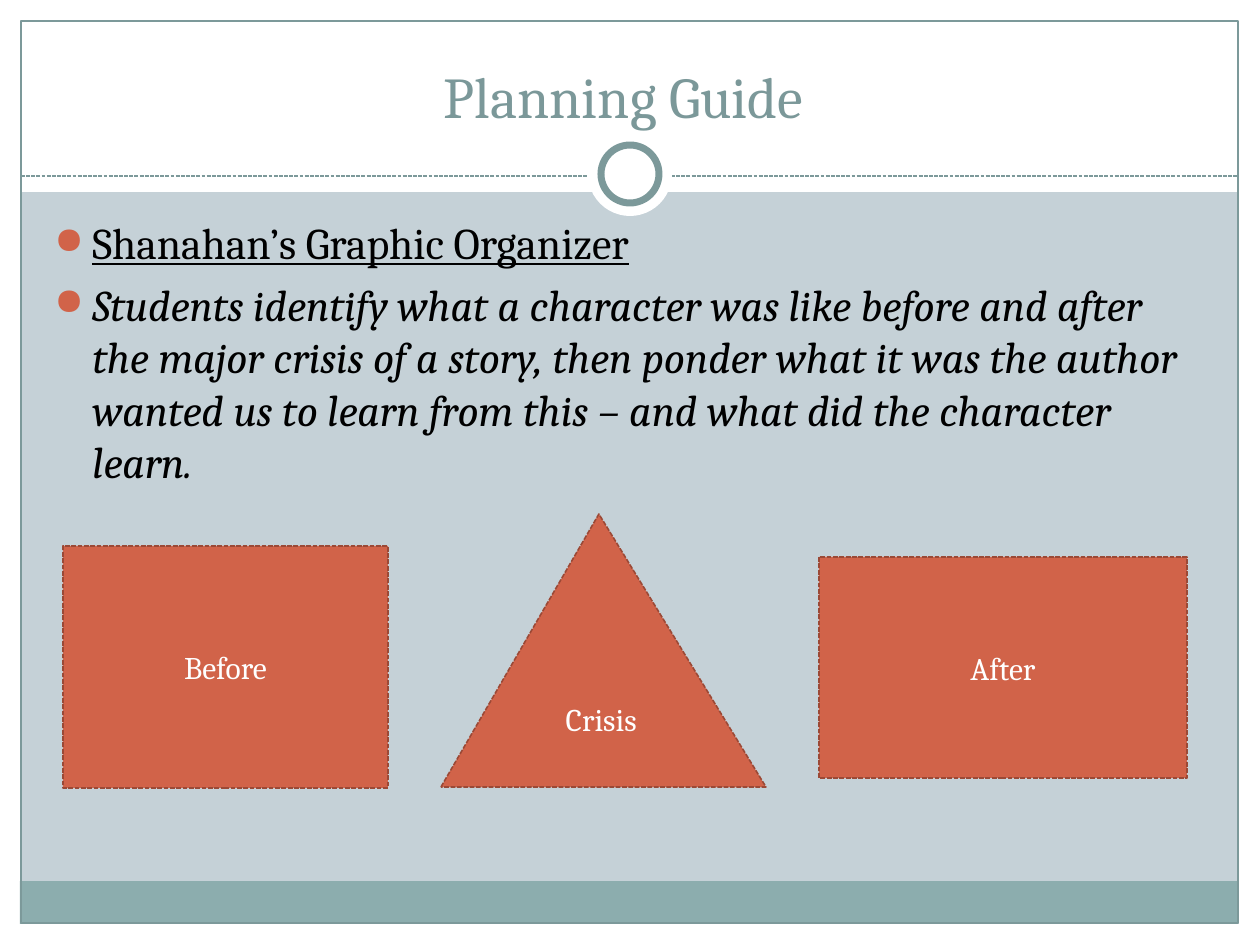
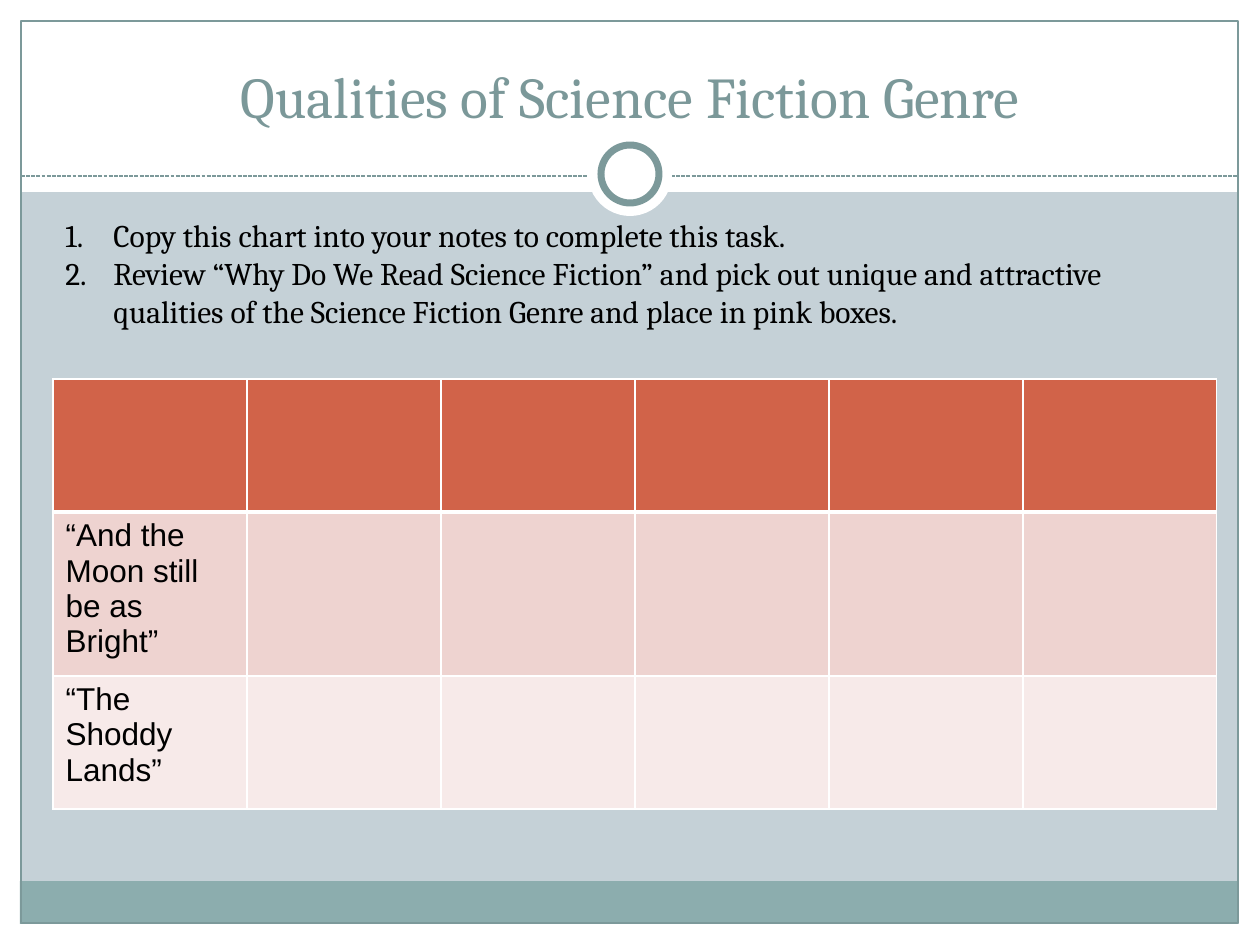
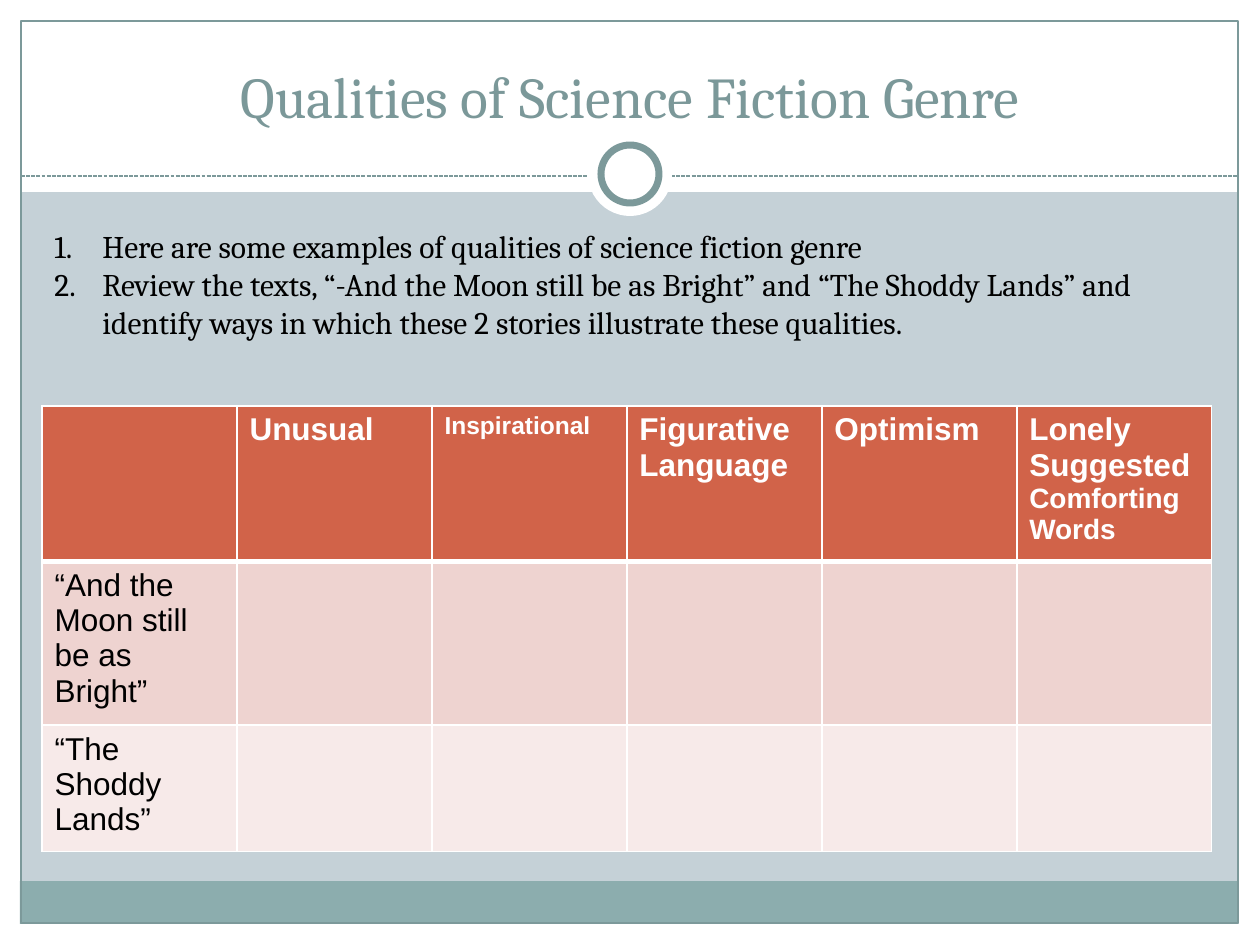
from typing import NamedTuple

from lxml.etree import SubElement
from pptx import Presentation
from pptx.dml.color import RGBColor
from pptx.enum.dml import MSO_LINE
from pptx.enum.shapes import MSO_CONNECTOR, MSO_SHAPE as Preset
from pptx.enum.text import MSO_ANCHOR as Anchor, PP_ALIGN as Align
from pptx.oxml.ns import qn
from pptx.util import Emu, Pt

PX_PER_INCH = 126
SLIDE_WIDTH, SLIDE_HEIGHT = 1260, 945
SERIF, SANS = "Cambria", "Arial"
COLORS = {
    "background": "C5D1D7",
    "white": "FFFFFF",
    "black": "000000",
    "band": "8CADAE",
    "frame": "7C999A",
    "title": "7B9899",
    "accent": "D16349",
    "accent_edge": "9B4936",
    "row_dark": "EED3D0",
    "row_light": "F7EAE9",
}


class Box(NamedTuple):
    left: int
    top: int
    width: int
    height: int


class Figure(NamedTuple):
    box: Box
    preset: Preset = Preset.RECTANGLE
    fill: str | None = None
    line: str | None = None
    line_width: float = 0.75
    dashed: bool = False
    label: str = ""
    adjustment: float | None = None


class Piece(NamedTuple):
    text: str
    size: float = 18
    color: str = "black"
    font: str = SERIF
    bold: bool = False
    italic: bool = False
    underline: bool = False


class Grid(NamedTuple):
    left: int
    top: int
    column_width: int
    row_heights: tuple[int, ...]
    headings: list[list[Piece]]


# Shared frame: margins, footer band, outline, and the ring on the divider
MARGINS_AND_BAND = [
    Figure(Box(0, 924, SLIDE_WIDTH, 21), fill="white"),
    Figure(Box(0, 0, SLIDE_WIDTH, 192), fill="white"),
    Figure(Box(0, 0, 21, SLIDE_HEIGHT), fill="white"),
    Figure(Box(1239, 0, 21, SLIDE_HEIGHT), fill="white"),
    Figure(Box(20, 881, 1218, 43), fill="band"),
    Figure(Box(21, 21, 1217, 902), line="frame"),
]
RING = [
    Figure(Box(588, 132, 84, 84), Preset.OVAL, fill="white"),
    Figure(Box(601, 145, 58, 58), Preset.OVAL, fill="white", line="frame", line_width=4),
]
TITLE_BOX = Box(42, 31, 1176, 105)

# Slide content
STAGES = [
    Figure(Box(63, 546, 325, 242), Preset.RECTANGLE, "accent", "accent_edge", 0.9, True, "Before"),
    Figure(Box(441, 514, 325, 273), Preset.ISOSCELES_TRIANGLE, "accent", "accent_edge", 0.9, True,
           "Crisis", 0.486),
    Figure(Box(819, 557, 368, 221), Preset.RECTANGLE, "accent", "accent_edge", 0.9, True, "After"),
]
ORGANIZER = [
    Piece("Shanahan’s Graphic Organizer", 25, underline=True),
    Piece("Students identify what a character was like before and after the major crisis of a "
          "story, then ponder what it was the author wanted us to learn from this – and what "
          "did the character learn.", 25, italic=True),
]
STORIES = ["“And the Moon still be as Bright”", "“The Shoddy Lands”"]
GENRE_TITLE = "Qualities of Science Fiction Genre"
COPY_STEPS = [
    "Copy this chart into your notes to complete this task.",
    "Review “Why Do We Read Science Fiction” and pick out unique and attractive qualities of "
    "the Science Fiction Genre and place in pink boxes.",
]
REVIEW_STEPS = [
    "Here are some examples of qualities of science fiction genre",
    "Review the texts, “-And the Moon still be as Bright” and “The Shoddy Lands” and identify "
    "ways in which these 2 stories illustrate these qualities.",
]


def heading(text: str, size: float = 18) -> Piece:
    return Piece(text, size, "white", SANS, bold=True)


BLANK_GRID = Grid(53, 379, 194, (133, 154, 133), [[] for _ in range(6)])
QUALITY_GRID = Grid(42, 406, 195, (150, 159, 122), [
    [],
    [heading("Unusual")],
    [heading("Inspirational", 14)],
    [heading("Figurative Language")],
    [heading("Optimism")],
    [heading("Lonely Suggested "), heading("Comforting Words", 16)],
])


def px(length: int) -> Emu:
    return Emu(round(length * 914400 / PX_PER_INCH))


def rgb(name: str) -> RGBColor:
    return RGBColor.from_string(COLORS[name])


def place(box: Box) -> list[Emu]:
    return [px(length) for length in box]


def add_piece(paragraph, piece: Piece) -> None:
    run = paragraph.add_run()
    run.text = piece.text
    font = run.font
    font.name, font.size = piece.font, Pt(piece.size)
    font.bold, font.italic, font.underline = piece.bold, piece.italic, piece.underline
    font.color.rgb = rgb(piece.color)


def set_line(line, color: str, width: float, dashed: bool) -> None:
    line.color.rgb = rgb(color)
    line.width = Pt(width)
    if dashed:
        line.dash_style = MSO_LINE.SQUARE_DOT


def add_figure(slide, figure: Figure) -> None:
    shape = slide.shapes.add_shape(figure.preset, *place(figure.box))
    shape.shadow.inherit = False
    if figure.adjustment is not None:
        shape.adjustments[0] = figure.adjustment
    if figure.fill:
        shape.fill.solid()
        shape.fill.fore_color.rgb = rgb(figure.fill)
    else:
        shape.fill.background()
    if figure.line:
        set_line(shape.line, figure.line, figure.line_width, figure.dashed)
    else:
        shape.line.fill.background()
    if figure.label:
        shape.text_frame.vertical_anchor = Anchor.MIDDLE
        paragraph = shape.text_frame.paragraphs[0]
        paragraph.alignment = Align.CENTER
        add_piece(paragraph, Piece(figure.label, color="white"))


def add_divider(slide) -> None:
    divider = slide.shapes.add_connector(
        MSO_CONNECTOR.STRAIGHT, px(21), px(176), px(1239), px(176))
    set_line(divider.line, "frame", 0.75, True)
    SubElement(divider.line._get_or_add_ln().getparent(), qn("a:effectLst"))


def add_text(slide, box: Box, pieces: list[Piece], anchor: Anchor = Anchor.TOP) -> list:
    """Add one paragraph per piece and return the paragraphs."""
    frame = slide.shapes.add_textbox(*place(box)).text_frame
    frame.word_wrap = True
    frame.vertical_anchor = anchor
    for index, piece in enumerate(pieces):
        add_piece(frame.add_paragraph() if index else frame.paragraphs[0], piece)
    return list(frame.paragraphs)


def indent(paragraph, distance: int):
    """Set a hanging indent and return the paragraph properties."""
    properties = paragraph._p.get_or_add_pPr()
    properties.set("marL", str(px(distance)))
    properties.set("indent", str(-px(distance)))
    return properties


def add_bullets(slide, box: Box, pieces: list[Piece]) -> None:
    for paragraph in add_text(slide, box, pieces):
        paragraph.space_before = Pt(5)
        properties = indent(paragraph, 38)
        color = SubElement(properties, qn("a:buClr"))
        SubElement(color, qn("a:srgbClr"), val=COLORS["accent"])
        SubElement(properties, qn("a:buSzPct"), val="85000")
        SubElement(properties, qn("a:buChar"), char="●")


def add_steps(slide, box: Box, steps: list[str]) -> None:
    for paragraph in add_text(slide, box, [Piece(step) for step in steps]):
        SubElement(indent(paragraph, 48), qn("a:buAutoNum"), type="arabicPeriod")


def set_borders(cell, top: int, bottom: int) -> None:
    properties = cell._tc.get_or_add_tcPr()
    widths = {"lnL": 1, "lnR": 1, "lnT": top, "lnB": bottom}
    for position, (side, width) in enumerate(widths.items()):
        border = properties.makeelement(qn(f"a:{side}"), {"w": str(Pt(width))})
        fill = SubElement(border, qn("a:solidFill"))
        SubElement(fill, qn("a:srgbClr"), val=COLORS["white"])
        properties.insert(position, border)


def add_grid(slide, grid: Grid) -> None:
    columns = len(grid.headings)
    box = Box(grid.left, grid.top, columns * grid.column_width, sum(grid.row_heights))
    rows = [grid.headings]
    for story in STORIES:
        rows.append([[Piece(story, font=SANS)]] + [[] for _ in range(columns - 1)])
    table = slide.shapes.add_table(len(rows), columns, *place(box)).table
    table.first_row = table.horz_banding = False
    for column in table.columns:
        column.width = px(grid.column_width)
    fills = ("accent", "row_dark", "row_light")
    for row_index, (row, fill) in enumerate(zip(rows, fills)):
        table.rows[row_index].height = px(grid.row_heights[row_index])
        for column_index, pieces in enumerate(row):
            cell = table.cell(row_index, column_index)
            cell.fill.solid()
            cell.fill.fore_color.rgb = rgb(fill)
            set_borders(cell, 3 if row_index == 1 else 1, 3 if row_index == 0 else 1)
            for piece in pieces:
                add_piece(cell.text_frame.paragraphs[0], piece)


def add_framed_slide(presentation, title: str):
    slide = presentation.slides.add_slide(presentation.slide_layouts[6])
    slide.background.fill.solid()
    slide.background.fill.fore_color.rgb = rgb("background")
    for figure in MARGINS_AND_BAND:
        add_figure(slide, figure)
    add_divider(slide)
    for figure in RING:
        add_figure(slide, figure)
    [paragraph] = add_text(slide, TITLE_BOX, [Piece(title, 33, "title")], Anchor.BOTTOM)
    paragraph.alignment = Align.CENTER
    return slide


def main() -> None:
    presentation = Presentation()
    presentation.slide_width, presentation.slide_height = px(SLIDE_WIDTH), px(SLIDE_HEIGHT)

    # Before, crisis, after
    slide = add_framed_slide(presentation, "Planning Guide ")
    add_bullets(slide, Box(42, 210, 1172, 630), ORGANIZER)
    for stage in STAGES:
        add_figure(slide, stage)

    # Chart to fill in
    slide = add_framed_slide(presentation, GENRE_TITLE)
    add_grid(slide, BLANK_GRID)
    add_steps(slide, Box(53, 210, 1155, 127), COPY_STEPS)

    # Chart with example qualities
    slide = add_framed_slide(presentation, GENRE_TITLE)
    add_grid(slide, QUALITY_GRID)
    add_steps(slide, Box(42, 221, 1166, 127), REVIEW_STEPS)

    presentation.save("out.pptx")


if __name__ == "__main__":
    main()
